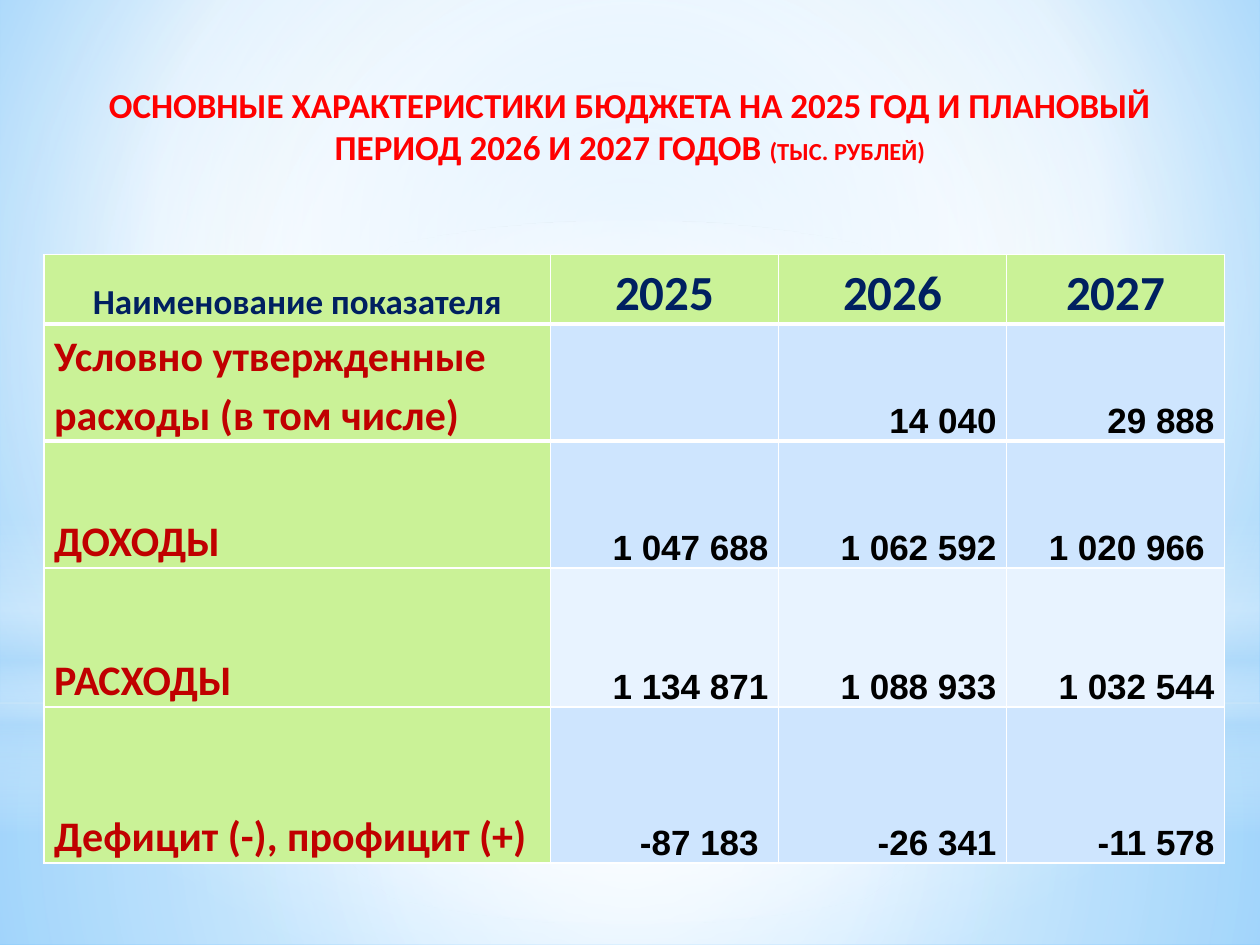
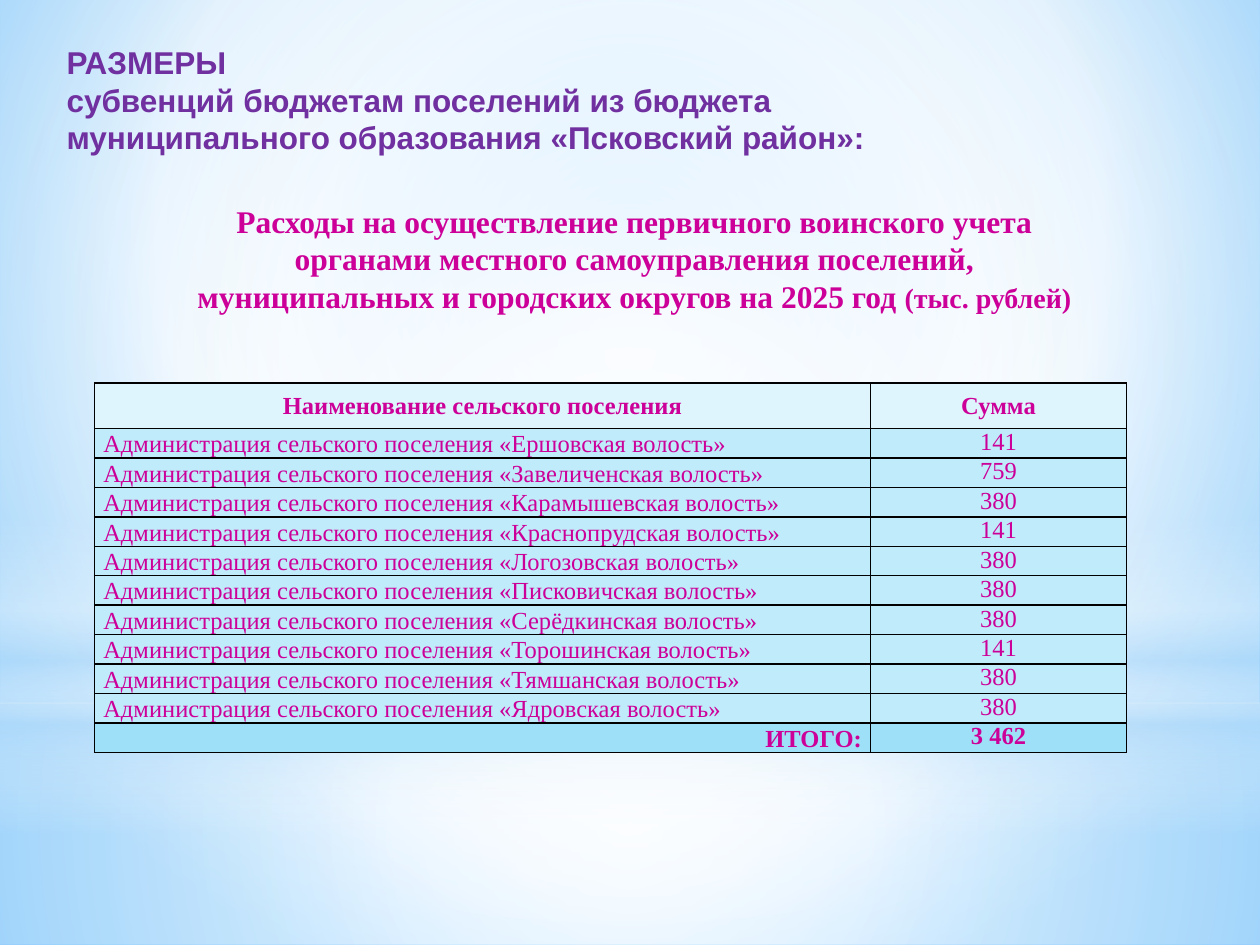
import pptx
import pptx.dml.color
import pptx.enum.shapes
import pptx.enum.text
import pptx.oxml
import pptx.oxml.ns
import pptx.util
from lxml import etree

Inches = pptx.util.Inches
Pt = pptx.util.Pt
ALIGN = pptx.enum.text.PP_ALIGN
ANCHOR = pptx.enum.text.MSO_ANCHOR
SHAPE = pptx.enum.shapes.MSO_SHAPE
qn = pptx.oxml.ns.qn

# Shared colours
WHITE, BLACK, HAZE = "FFFFFF", "000000", "B4DCFA"
RED, DARK_RED, NAVY = "FF0000", "C00000", "002060"
PURPLE, MAGENTA = "7030A0", "CC0099"
GREEN, BLUE, PALE_BLUE = "CAF297", "CEE5FE", "E8F3FF"
HEAD_CYAN, ROW_CYAN, TOTAL_CYAN = "DFF5FD", "BFEBFA", "9EE0F8"

# Shared backdrop: stops are (position %, colour, opacity %)
CENTRE = (50, 50, 50, 50)
SKY = [(0, "9ED5FF", 100), (60, WHITE, 100), (100, "5BB9FF", 100)]
BACKDROP = [
    (SHAPE.RECTANGLE, 5.58, 1.92, [(0, WHITE, 91), (37, WHITE, 76), (100, HAZE, 79)], CENTRE),
    (SHAPE.RECTANGLE, 0, 5.58, [(0, WHITE, 89), (48, WHITE, 62), (100, HAZE, 79)], CENTRE),
    (SHAPE.RECTANGLE, 4.12, 2.5, [(0, WHITE, 0), (29, WHITE, 30), (45, HAZE, 40),
                                  (55, WHITE, 26), (65, HAZE, 60), (100, WHITE, 0)], None),
    (SHAPE.OVAL, 1.75, 5.58, [(0, WHITE, 100), (56, WHITE, 0)], CENTRE),
]

BUDGET = [
    ("Наименование показателя", "2025", "2026", "2027"),
    ("Условно утвержденные расходы (в том числе)", "", "14 040", "29 888"),
    ("ДОХОДЫ", "1 047 688", "1 062 592", "1 020 966 "),
    ("РАСХОДЫ", "1 134 871", "1 088 933", "1 032 544"),
    ("Дефицит (-), профицит (+)", "-87 183 ", "-26 341", "-11 578"),
]
SUBVENTIONS = [
    ("Ершовская", 141), ("Завеличенская", 759), ("Карамышевская", 380),
    ("Краснопрудская", 141), ("Логозовская", 380), ("Писковичская", 380),
    ("Серёдкинская", 380), ("Торошинская", 141), ("Тямшанская", 380),
    ("Ядровская", 380),
]


def rgb(color):
    return pptx.dml.color.RGBColor.from_string(color)


def set_gradient(solid, stops, focus):
    """Replace a solid fill element by a gradient; no focus means top to bottom."""
    grad = etree.Element(qn("a:gradFill"), rotWithShape="1")
    gs_list = etree.SubElement(grad, qn("a:gsLst"))
    for pos, color, opacity in stops:
        gs = etree.SubElement(gs_list, qn("a:gs"), pos=str(pos * 1000))
        clr = etree.SubElement(gs, qn("a:srgbClr"), val=color)
        if opacity < 100:
            etree.SubElement(clr, qn("a:alpha"), val=str(opacity * 1000))
    if focus:
        path = etree.SubElement(grad, qn("a:path"))
        path.set("path", "circle")
        sides = {side: str(v * 1000) for side, v in zip("ltrb", focus)}
        etree.SubElement(path, qn("a:fillToRect"), sides)
    else:
        etree.SubElement(grad, qn("a:lin"), ang="5400000", scaled="0")
    solid.getparent().replace(solid, grad)


def add_slide(prs):
    s = prs.slides.add_slide(prs.slide_layouts[6])
    s.background.fill.solid()
    s.background.fill.fore_color.rgb = rgb(WHITE)
    set_gradient(s.element.find(".//" + qn("p:bgPr")).find(qn("a:solidFill")),
                 SKY, (20, 10, 20, 60))
    for kind, top, height, stops, focus in BACKDROP:
        sp = s.shapes.add_shape(kind, 0, Inches(top), prs.slide_width, Inches(height))
        sp.shadow.inherit = False
        sp.line.fill.background()
        sp.fill.solid()
        sp.fill.fore_color.rgb = rgb(WHITE)
        set_gradient(sp.element.spPr.find(qn("a:solidFill")), stops, focus)
    return s


def format_run(r, size, font, color, bold=True):
    r.font.size, r.font.name, r.font.bold = Pt(size), font, bold
    r.font.color.rgb = rgb(color)


def add_heading(s, box, text, size, font, color, align=ALIGN.CENTER,
                anchor=ANCHOR.TOP, unit="", unit_size=14):
    tb = s.shapes.add_textbox(*map(Inches, box))
    tf = tb.text_frame
    tf.word_wrap = True
    tf.vertical_anchor = anchor
    p = tf.paragraphs[0]
    p.text = text
    p.alignment = align
    for r in p.runs:
        format_run(r, size, font, color)
    if unit:
        r = p.add_run()
        r.text = unit
        format_run(r, unit_size, font, color)


def add_grid(s, left, top, col_widths, row_heights):
    frame = s.shapes.add_table(len(row_heights), len(col_widths), Inches(left), Inches(top),
                               Inches(sum(col_widths)), Inches(sum(row_heights)))
    table = frame.table
    table.first_row = table.horz_banding = False
    for col, width in zip(table.columns, col_widths):
        col.width = Inches(width)
    for row, height in zip(table.rows, row_heights):
        row.height = Inches(height)
    return table


def set_borders(cell, color, top=1, bottom=1):
    tc_pr = cell._tc.get_or_add_tcPr()
    for side, width in (("L", 1), ("R", 1), ("T", top), ("B", bottom)):
        ln = etree.SubElement(tc_pr, qn("a:ln" + side), w=str(Pt(width)))
        fill = etree.SubElement(ln, qn("a:solidFill"))
        etree.SubElement(fill, qn("a:srgbClr"), val=color)


def fill_cell(cell, text, fill, style, align, anchor, margin, spacing=None):
    cell.fill.solid()
    cell.fill.fore_color.rgb = rgb(fill)
    cell.margin_left = cell.margin_right = Inches(margin)
    cell.margin_top = cell.margin_bottom = 0
    cell.vertical_anchor = anchor
    p = cell.text_frame.paragraphs[0]
    p.alignment = align
    if spacing:
        p.line_spacing = spacing
    if text:
        p.text = text
        format_run(p.runs[0], *style)


def add_budget_table(s):
    table = add_grid(s, 0.35, 2.02, [4.02, 1.81, 1.81, 1.73], [0.55, 0.93, 1.01, 1.1, 1.24])
    rule_widths = [1, 3, 3, 1, 1, 1]
    for i, row in enumerate(BUDGET):
        for j, text in enumerate(row):
            if i == 0:
                style, align = (28 if j else 20, "Calibri", NAVY), ALIGN.CENTER
            elif j == 0:
                style, align = (24, "Calibri", DARK_RED), ALIGN.LEFT
            else:
                style, align = (20, "Arial", BLACK), ALIGN.RIGHT
            fill = GREEN if i == 0 or j == 0 else PALE_BLUE if i == 3 else BLUE
            cell = table.cell(i, j)
            set_borders(cell, WHITE, rule_widths[i], rule_widths[i + 1])
            fill_cell(cell, text, fill, style, align, ANCHOR.BOTTOM, 0.08, 1.15)


def add_subvention_table(s):
    rows = [("Наименование сельского поселения", "Сумма")]
    rows += [(f"Администрация сельского поселения «{name} волость»", str(amount))
             for name, amount in SUBVENTIONS]
    rows.append(("ИТОГО:", "3 462"))
    last = len(rows) - 1
    head_height, table_height = 0.36, 2.93
    row_height = (table_height - head_height) / last
    table = add_grid(s, 0.75, 3.04, [6.16, 2.03], [head_height] + [row_height] * last)
    for i, row in enumerate(rows):
        fill = {0: HEAD_CYAN, last: TOTAL_CYAN}.get(i, ROW_CYAN)
        name_align = {0: ALIGN.CENTER, last: ALIGN.RIGHT}.get(i, ALIGN.LEFT)
        style = (14, "Times New Roman", MAGENTA, i in (0, last))
        for j, text in enumerate(row):
            align = ALIGN.CENTER if j else name_align
            anchor = ANCHOR.MIDDLE if i == 0 else ANCHOR.TOP if j else ANCHOR.BOTTOM
            cell = table.cell(i, j)
            set_borders(cell, BLACK)
            fill_cell(cell, text, fill, style, align, anchor, 0.07)


def main():
    prs = pptx.Presentation()
    prs.slide_width, prs.slide_height = Inches(10), Inches(7.5)

    # Budget totals
    s = add_slide(prs)
    add_heading(s, (0.5, 0.37, 9, 1.25),
                "ОСНОВНЫЕ ХАРАКТЕРИСТИКИ БЮДЖЕТА НА 2025 ГОД И ПЛАНОВЫЙ "
                "ПЕРИОД 2026 И 2027 ГОДОВ ",
                20, "Calibri", RED, anchor=ANCHOR.MIDDLE, unit="(ТЫС. РУБЛЕЙ)")
    add_budget_table(s)

    # Subventions to settlements
    s = add_slide(prs)
    add_heading(s, (0.43, 0.29, 9.13, 1.1),
                "РАЗМЕРЫ\vсубвенций бюджетам поселений из бюджета\v"
                "муниципального образования «Псковский район»:",
                18, "Arial", PURPLE, align=ALIGN.LEFT)
    add_heading(s, (1.46, 1.55, 7.15, 1.01),
                "Расходы на осуществление первичного воинского учета органами местного "
                "самоуправления поселений, муниципальных и городских округов на 2025 год ",
                18, "Times New Roman", MAGENTA, unit="(тыс. рублей)", unit_size=16)
    add_subvention_table(s)

    prs.save("out.pptx")


if __name__ == "__main__":
    main()
